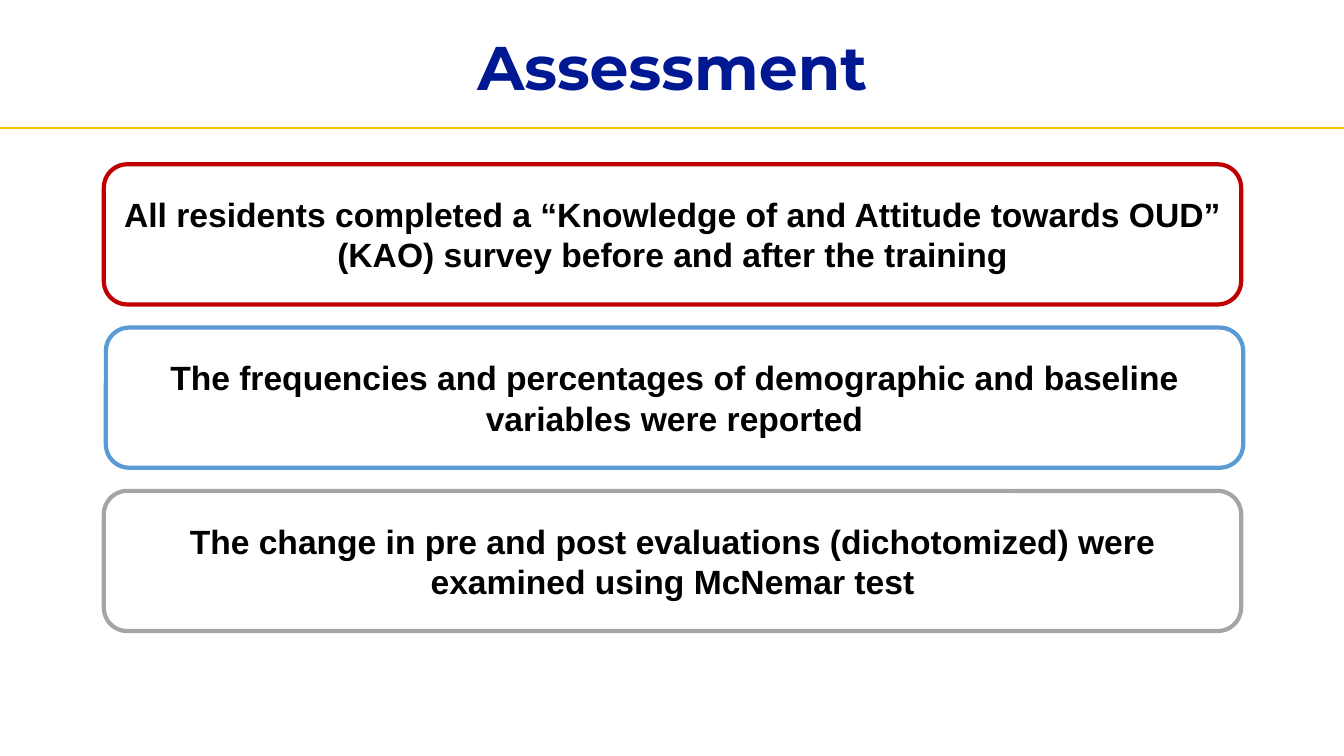
from lxml.etree import SubElement
from pptx import Presentation
from pptx.dml.color import RGBColor as Rgb
from pptx.enum.shapes import MSO_CONNECTOR as Conn, MSO_SHAPE as Shape
from pptx.enum.text import MSO_ANCHOR as Anchor, PP_ALIGN as Align
from pptx.oxml.ns import qn
from pptx.util import Inches, Pt

WIDTH, HEIGHT = 13.33, 7.5
COLORS = {
    "title": "011893", "rule": "FFC000", "text": "000000", "fill": "FFFFFF",
    "red": "C00000", "blue": "5B9BD5", "gray": "A5A5A5",
}
# Outline colour, left shift and wording of each card
CARDS = [
    ("red", 0, "All residents completed a “Knowledge of and Attitude towards OUD” "
               "(KAO) survey before and after the training"),
    ("blue", 0.02, "The frequencies and percentages of demographic and baseline "
                   "variables were reported"),
    ("gray", 0, "The change in pre and post evaluations (dichotomized) were "
                "examined using McNemar test"),
]


def color(name):
    return Rgb.from_string(COLORS[name])


def write(shape, text, size=24, font="Arial", ink="text", space=None):
    """Fill a shape with bold, centred text."""
    frame = shape.text_frame
    frame.word_wrap = True
    frame.vertical_anchor = Anchor.MIDDLE
    para = frame.paragraphs[0]
    para.alignment = Align.CENTER
    para.line_spacing = space
    run = para.add_run()
    run.text = text
    run.font.size = Pt(size)
    run.font.name = font
    run.font.bold = True
    run.font.color.rgb = color(ink)


def add_header(slide, left, top, width, height):
    # Rule across the whole slide
    level = Inches(top + 1.27)
    rule = slide.shapes.add_connector(
        Conn.STRAIGHT, Inches(0), level, Inches(WIDTH), level)
    rule.line.color.rgb = color("rule")
    rule.line.width = Pt(1.5)
    SubElement(rule.element.spPr, qn("a:effectLst"))

    # Title
    title = slide.shapes.add_textbox(
        Inches(left), Inches(top), Inches(width), Inches(height))
    write(title, "Assessment", size=44, font="Montserrat", ink="title", space=0.9)


def add_cards(slide, left, top, width, height, gap=0.23):
    # Equal cards stacked in the given box
    tall = (height - gap * (len(CARDS) - 1)) / len(CARDS)
    for row, (edge, shift, text) in enumerate(CARDS):
        card = slide.shapes.add_shape(
            Shape.ROUNDED_RECTANGLE, Inches(left + shift),
            Inches(top + row * (tall + gap)), Inches(width), Inches(tall))
        card.shadow.inherit = False
        card.fill.solid()
        card.fill.fore_color.rgb = color("fill")
        card.line.color.rgb = color(edge)
        card.line.width = Pt(3)
        write(card, text)


def main():
    deck = Presentation()
    deck.slide_width, deck.slide_height = Inches(WIDTH), Inches(HEIGHT)
    slide = deck.slides.add_slide(deck.slide_layouts[6])
    add_header(slide, 0.92, 0, 11.5, 1.4)
    add_cards(slide, 1.03, 1.63, 11.28, 4.63)
    deck.save("out.pptx")


if __name__ == "__main__":
    main()
